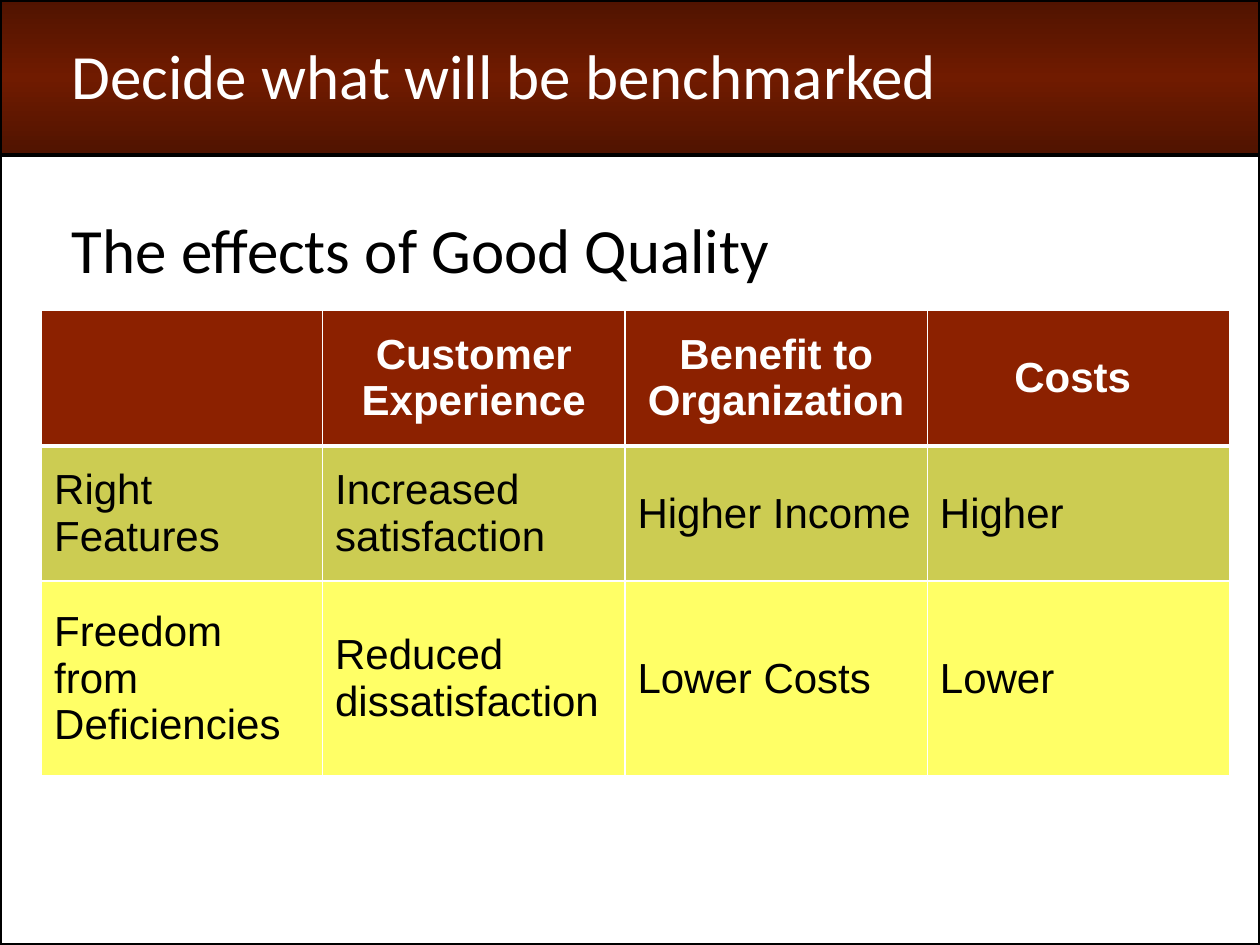
from copy import deepcopy

from lxml import etree
from pptx import Presentation
from pptx.dml.color import RGBColor
from pptx.enum import shapes, text
from pptx.oxml import ns
from pptx.util import Inches, Pt

COLORS = {
    "black": "000000",
    "white": "FFFFFF",
    "band_edge": "501300",
    "band_middle": "701B00",
    "header": "8C2100",
    "olive": "CCCC52",
    "yellow": "FFFF66",
}
ROWS = [
    ["", "Customer Experience", "Benefit to Organization", "Costs "],
    ["Right Features", "Increased satisfaction", "Higher Income", "Higher"],
    ["Freedom from Deficiencies", "Reduced dissatisfaction", "Lower Costs", "Lower"],
]
ROW_FILLS = ["header", "olive", "yellow"]
COLUMN_WIDTHS = [2.23, 2.4, 2.4, 2.4]
ROW_HEIGHTS = [1.08, 1.07, 1.55]


def rgb(name):
    return RGBColor.from_string(COLORS[name])


def write(frame, content, font="Arial", size=24, color="black", bold=False,
          align=text.PP_ALIGN.LEFT, spacing=None):
    paragraph = frame.paragraphs[0]
    paragraph.alignment = align
    paragraph.line_spacing = spacing
    run = paragraph.add_run()
    run.text = content
    run.font.name = font
    run.font.size = Pt(size)
    run.font.bold = bold
    run.font.color.rgb = rgb(color)


def place_heading(shape, content, left, top, width, height, color):
    """Place and format a one-line heading in a text box or placeholder."""
    shape.left, shape.top = Inches(left), Inches(top)
    shape.width, shape.height = Inches(width), Inches(height)
    frame = shape.text_frame
    frame.word_wrap = True
    frame.auto_size = text.MSO_AUTO_SIZE.NONE
    frame.vertical_anchor = text.MSO_ANCHOR.MIDDLE
    frame.margin_left = frame.margin_right = Inches(0.07)
    frame.margin_top = frame.margin_bottom = Inches(0.03)
    write(frame, content, font="Calibri", size=36, color=color, spacing=0.9)


def add_outlined_box(slide, left, top, width, height):
    box = slide.shapes.add_shape(shapes.MSO_SHAPE.RECTANGLE, Inches(left),
                                 Inches(top), Inches(width), Inches(height))
    box.shadow.inherit = False
    box.fill.background()
    box.line.color.rgb = rgb("black")
    box.line.width = Pt(2.25)
    return box


def add_title_band(slide, left, top, width, height):
    band = add_outlined_box(slide, left, top, width, height)
    band.fill.gradient()
    band.fill.gradient_angle = 90
    stop_list = band.element.spPr.find(".//" + ns.qn("a:gsLst"))
    stop_list.append(deepcopy(stop_list[0]))
    stops = zip(band.fill.gradient_stops, [0, 0.5, 1],
                ["band_edge", "band_middle", "band_edge"])
    for stop, position, color in stops:
        stop.position = position
        stop.color.rgb = rgb(color)

    title = slide.shapes.title
    slide.shapes.element.append(title.element)  # bring in front of the band
    place_heading(title, "Decide what will be benchmarked",
                  left + 0.5, top + 0.17, width - 1.17, 0.92, "white")


def add_bottom_border(cell, color, points):
    properties = cell._tc.get_or_add_tcPr()
    border = etree.Element(ns.qn("a:lnB"), w=str(Pt(points)))
    fill = etree.SubElement(border, ns.qn("a:solidFill"))
    etree.SubElement(fill, ns.qn("a:srgbClr"), val=COLORS[color])
    properties.insert(0, border)


def add_effects_table(slide, left, top):
    table = slide.shapes.add_table(
        len(ROWS), len(COLUMN_WIDTHS), Inches(left), Inches(top),
        Inches(sum(COLUMN_WIDTHS)), Inches(sum(ROW_HEIGHTS))).table
    table.horz_banding = False
    for column, width in zip(table.columns, COLUMN_WIDTHS):
        column.width = Inches(width)
    for row_index, (row, height) in enumerate(zip(table.rows, ROW_HEIGHTS)):
        row.height = Inches(height)
        is_header = row_index == 0
        for cell, content in zip(row.cells, ROWS[row_index]):
            cell.fill.solid()
            cell.fill.fore_color.rgb = rgb(ROW_FILLS[row_index])
            cell.vertical_anchor = text.MSO_ANCHOR.MIDDLE
            if is_header:
                add_bottom_border(cell, "white", 2)
            if content:
                write(cell.text_frame, content, bold=is_header,
                      color="white" if is_header else "black",
                      align=text.PP_ALIGN.CENTER if is_header else text.PP_ALIGN.LEFT)


def main():
    presentation = Presentation()
    presentation.slide_width, presentation.slide_height = Inches(10), Inches(7.5)
    slide = presentation.slides.add_slide(presentation.slide_layouts[5])
    slide.background.fill.solid()
    slide.background.fill.fore_color.rgb = rgb("white")

    add_outlined_box(slide, 0, 0, 10, 7.5)
    add_title_band(slide, 0, 0, 10, 1.23)
    subtitle = slide.shapes.add_textbox(0, 0, 0, 0)
    place_heading(subtitle, "The effects of Good Quality",
                  0.5, 1.55, 8.83, 0.92, "black")
    add_effects_table(slide, 0.33, 2.46)
    presentation.save("out.pptx")


if __name__ == "__main__":
    main()
